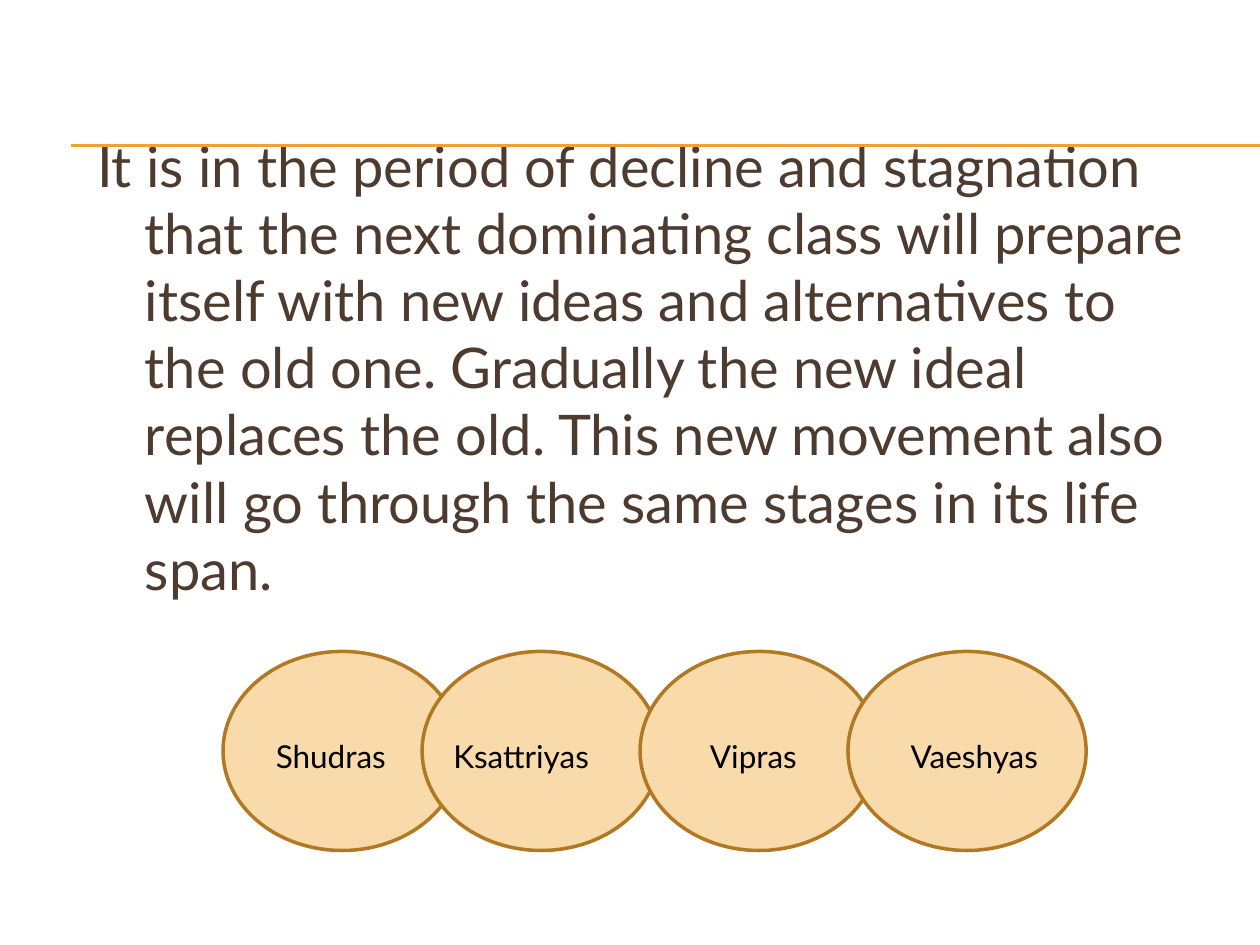
from lxml import etree
from pptx import Presentation
from pptx.dml.color import RGBColor
from pptx.enum.shapes import MSO_CONNECTOR, MSO_SHAPE
from pptx.enum.text import MSO_ANCHOR, MSO_AUTO_SIZE, PP_ALIGN
from pptx.oxml.ns import qn
from pptx.util import Inches, Pt

STRAIGHT = MSO_CONNECTOR.STRAIGHT
OVAL = MSO_SHAPE.OVAL
TOP = MSO_ANCHOR.TOP
NO_FIT = MSO_AUTO_SIZE.NONE
GROW = MSO_AUTO_SIZE.SHAPE_TO_FIT_TEXT
LEFT, CENTER = PP_ALIGN.LEFT, PP_ALIGN.CENTER

FONT = "Lato"
BODY = (
    "It is in the period of decline and stagnation that the next dominating class "
    "will prepare itself with new ideas and alternatives to the old one. Gradually "
    "the new ideal replaces the old. This new movement also will go through the "
    "same stages in its life span."
)
RULE_HEIGHTS = (1.15, 1.16)
# label, oval left, label left, label width, alignment
CLASSES = [
    ("Shudras", 1.77, 2.09, 1.18, LEFT),
    ("Ksattriyas", 3.35, 3.5, 1.5, LEFT),
    ("Vipras", 5.08, 5.31, 1.34, CENTER),
    ("Vaeshyas", 6.73, 7.13, 1.34, LEFT),
]


def color(value):
    return RGBColor.from_string(value)


def add_run(paragraph, text, size, value):
    run = paragraph.add_run()
    run.text = text
    run.font.name = FONT
    run.font.size = Pt(size)
    run.font.color.rgb = color(value)


def add_rule(slide, y):
    rule = slide.shapes.add_connector(
        STRAIGHT, Inches(0.56), Inches(y), Inches(10), Inches(y)
    )
    rule.line.color.rgb = color("F0A22E")
    rule.line.width = Pt(0.75)
    properties = rule._element.find(qn("p:spPr"))
    etree.SubElement(properties, qn("a:effectLst"))


def fill_body(shape):
    shape.left, shape.top = Inches(0.67), Inches(0.99)
    shape.width, shape.height = Inches(9), Inches(5.15)
    frame = shape.text_frame
    frame.auto_size = NO_FIT
    frame.vertical_anchor = TOP
    paragraph = frame.paragraphs[0]
    properties = paragraph._p.get_or_add_pPr()
    properties.set("marL", str(Inches(0.38)))
    properties.set("indent", str(Inches(-0.38)))
    etree.SubElement(properties, qn("a:buNone"))
    add_run(paragraph, BODY, 32, "4E3B30")


def add_oval(slide, left):
    oval = slide.shapes.add_shape(
        OVAL, Inches(left), Inches(5.17), Inches(1.89), Inches(1.58)
    )
    oval.shadow.inherit = False
    oval.fill.solid()
    oval.fill.fore_color.rgb = color("F9DAAB")
    oval.line.color.rgb = color("B27822")
    oval.line.width = Pt(2)


def add_label(slide, text, left, width, alignment):
    label = slide.shapes.add_textbox(
        Inches(left), Inches(5.8), Inches(width), Inches(0.4)
    )
    frame = label.text_frame
    frame.word_wrap = True
    frame.auto_size = GROW
    paragraph = frame.paragraphs[0]
    paragraph.alignment = alignment
    add_run(paragraph, text, 18, "000000")


def main():
    presentation = Presentation()
    presentation.slide_width = Inches(10)
    presentation.slide_height = Inches(7.5)
    slide = presentation.slides.add_slide(presentation.slide_layouts[1])
    title = slide.shapes.title._element
    title.getparent().remove(title)

    for y in RULE_HEIGHTS:
        add_rule(slide, y)
    fill_body(slide.placeholders[1])
    for text, oval_left, label_left, width, alignment in CLASSES:
        add_oval(slide, oval_left)
        add_label(slide, text, label_left, width, alignment)

    presentation.save("out.pptx")


if __name__ == "__main__":
    main()
